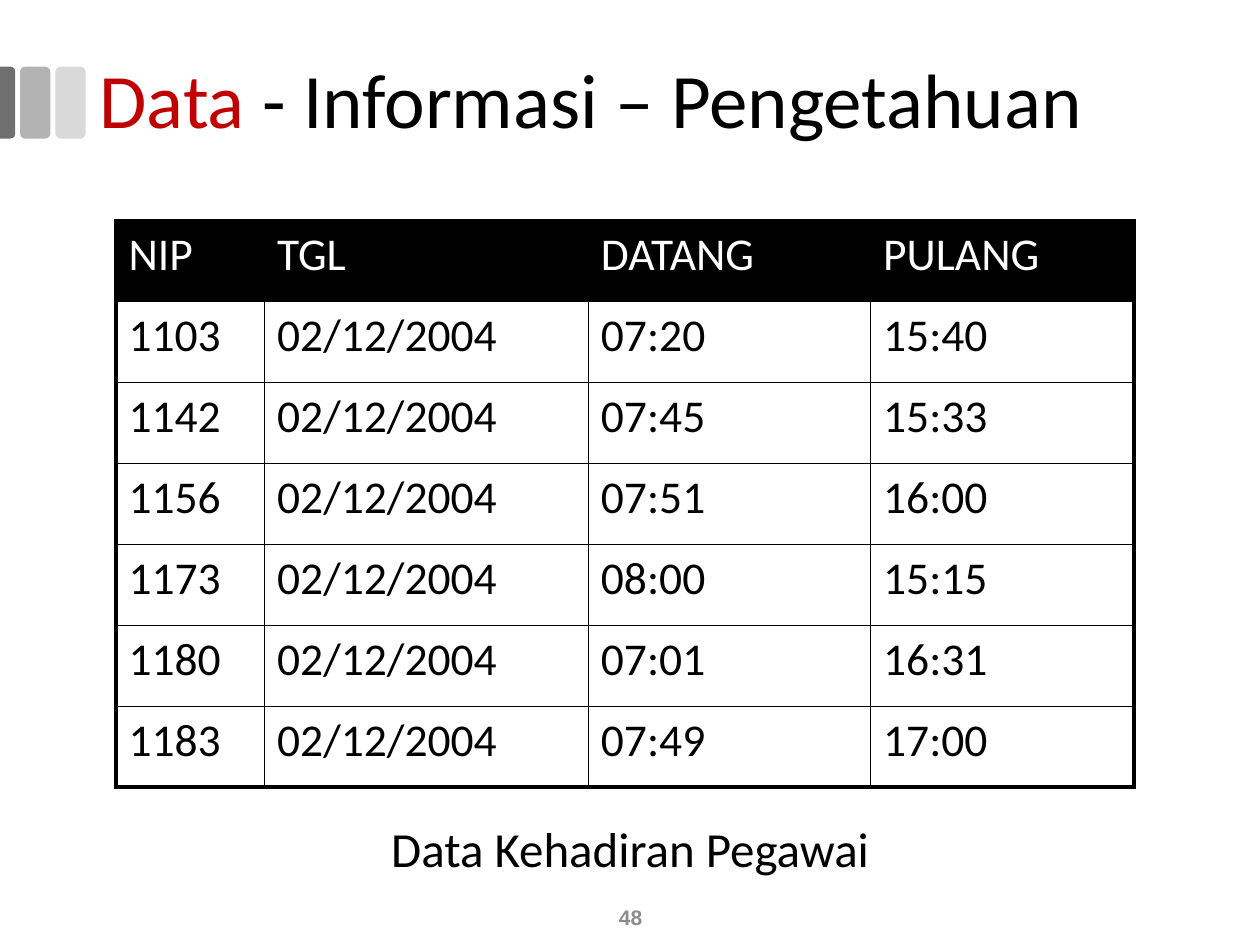
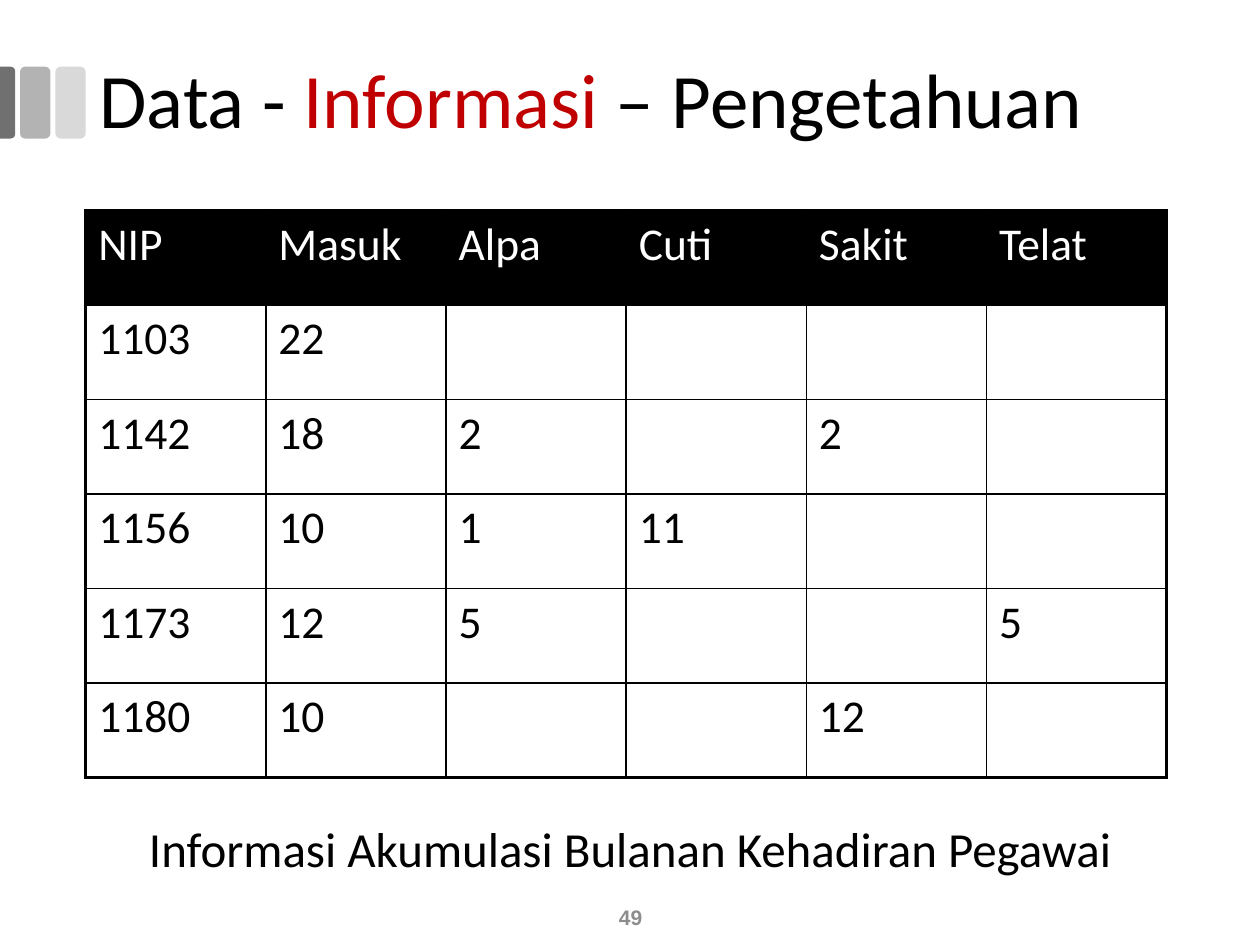
import collections

import lxml.etree
import pptx
import pptx.dml.color
import pptx.enum.shapes
import pptx.enum.text
import pptx.oxml.ns
import pptx.util

SLIDE_WIDTH, SLIDE_HEIGHT = 10, 7.5
BLACK, WHITE, RED, GREY = "000000", "FFFFFF", "C00000", "8C8C8C"
BODY_FONT, NUMBER_FONT = "Calibri", "Arial"
OUTER_BORDER, INNER_BORDER = 2.25, 1

SHAPE = pptx.enum.shapes.MSO_SHAPE
ALIGN = pptx.enum.text.PP_ALIGN
ANCHOR = pptx.enum.text.MSO_ANCHOR

Box = collections.namedtuple("Box", "left top width height")

TITLE_BOX = Box(0.69, 0.17, 8.62, 1.31)
CAPTION_BOX = Box(0.69, 6.5, 8.62, 0.62)
NUMBER_BOX = Box(3.88, 7.08, 2.25, 0.4)
MARKS_BOX = Box(0, 0.53, 0.68, 0.57)

ATTENDANCE = [
    ["NIP", "TGL", "DATANG", "PULANG"],
    ["1103", "02/12/2004", "07:20", "15:40"],
    ["1142", "02/12/2004", "07:45", "15:33"],
    ["1156", "02/12/2004", "07:51", "16:00"],
    ["1173", "02/12/2004", "08:00", "15:15"],
    ["1180", "02/12/2004", "07:01", "16:31"],
    ["1183", "02/12/2004", "07:49", "17:00"],
]
MONTHLY_TOTALS = [
    ["NIP", "Masuk", "Alpa", "Cuti", "Sakit", "Telat"],
    ["1103", "22", "", "", "", ""],
    ["1142", "18", "2", "", "2", ""],
    ["1156", "10", "1", "11", "", ""],
    ["1173", "12", "5", "", "", "5"],
    ["1180", "10", "", "", "12", ""],
]


def color(hex_code):
    return pptx.dml.color.RGBColor.from_string(hex_code)


def inches(box):
    return [pptx.util.Inches(length) for length in box]


def write(frame, text, size=28, font=BODY_FONT, fill=BLACK, bold=False,
          align=ALIGN.LEFT, anchor=ANCHOR.TOP, line_spacing=None, accent=None):
    """Fill a text frame with one paragraph; the accent word turns red."""
    frame.word_wrap = True
    frame.vertical_anchor = anchor
    para = frame.paragraphs[0]
    para.alignment = align
    para.line_spacing = line_spacing
    before, word, after = text.partition(accent) if accent else (text, "", "")
    for part, part_fill in ((before, fill), (word, RED), (after, fill)):
        if part:
            span = para.add_run()
            span.text = part
            span.font.size = pptx.util.Pt(size)
            span.font.name = font
            span.font.bold = bold
            span.font.color.rgb = color(part_fill)


def add_mark(page, kind, box, fill, adjustment, rotation=0):
    mark = page.shapes.add_shape(kind, *inches(box))
    mark.shadow.inherit = False
    mark.fill.solid()
    mark.fill.fore_color.rgb = color(fill)
    mark.line.fill.background()
    mark.adjustments[0] = adjustment
    mark.rotation = rotation


def add_marks(page, box):
    """Three bars at the slide's edge; the first shows only its right end."""
    bar_width, pitch, stub_width = 0.24, 0.28, 0.12
    right = box.left + box.width
    for index, fill in enumerate(("D9D9D9", "B3B3B3")):
        bar = Box(right - bar_width - index * pitch, box.top, bar_width, box.height)
        add_mark(page, SHAPE.ROUNDED_RECTANGLE, bar, fill, 0.167)
    stub = Box(box.left + (stub_width - box.height) / 2,
               box.top + (box.height - stub_width) / 2, box.height, stub_width)
    add_mark(page, SHAPE.ROUND_2_SAME_RECTANGLE, stub, "707070", 0.292, rotation=90)


def add_title(page, box, text, accent):
    title = page.shapes.title
    title.left, title.top, title.width, title.height = inches(box)
    write(title.text_frame, text, size=44, accent=accent,
          anchor=ANCHOR.MIDDLE, line_spacing=0.9)


def add_text(page, box, text, **style):
    write(page.shapes.add_textbox(*inches(box)).text_frame, text, **style)


def set_borders(cell, widths):
    """Draw black borders, with widths in points for left, right, top, bottom."""
    properties = cell._tc.get_or_add_tcPr()
    for side, width in zip("LRTB", widths):
        line = lxml.etree.SubElement(properties, pptx.oxml.ns.qn(f"a:ln{side}"),
                                     w=str(pptx.util.Pt(width)))
        solid = lxml.etree.SubElement(line, pptx.oxml.ns.qn("a:solidFill"))
        lxml.etree.SubElement(solid, pptx.oxml.ns.qn("a:srgbClr"), val=BLACK)


def add_grid(page, box, rows, column_shares):
    row_count, column_count = len(rows), len(column_shares)
    table = page.shapes.add_table(row_count, column_count, *inches(box)).table
    table.horz_banding = False
    for column, share in zip(table.columns, column_shares):
        column.width = pptx.util.Inches(box.width * share / sum(column_shares))
    for row_index, values in enumerate(rows):
        table.rows[row_index].height = pptx.util.Inches(box.height / row_count)
        is_header = row_index == 0
        for column_index, value in enumerate(values):
            cell = table.cell(row_index, column_index)
            on_edge = (column_index == 0, column_index == column_count - 1,
                       is_header, row_index == row_count - 1)
            set_borders(cell, [OUTER_BORDER if edge else INNER_BORDER
                               for edge in on_edge])
            if is_header:
                cell.fill.solid()
                cell.fill.fore_color.rgb = color(BLACK)
            else:
                cell.fill.background()
            write(cell.text_frame, value, size=26,
                  fill=WHITE if is_header else BLACK)


def add_table_page(deck, number, accent, caption, table_box, rows, column_shares):
    page = deck.slides.add_slide(deck.slide_layouts[5])
    add_marks(page, MARKS_BOX)
    add_title(page, TITLE_BOX, "Data - Informasi – Pengetahuan", accent)
    add_text(page, CAPTION_BOX, caption, align=ALIGN.CENTER, line_spacing=0.9)
    add_grid(page, table_box, rows, column_shares)
    add_text(page, NUMBER_BOX, str(number), size=12, font=NUMBER_FONT, fill=GREY,
             bold=True, align=ALIGN.CENTER, anchor=ANCHOR.MIDDLE)


def main():
    deck = pptx.Presentation()
    deck.slide_width = pptx.util.Inches(SLIDE_WIDTH)
    deck.slide_height = pptx.util.Inches(SLIDE_HEIGHT)
    add_table_page(deck, 48, "Data", "Data Kehadiran Pegawai",
                   Box(0.92, 1.75, 8.08, 4.5), ATTENDANCE, [1.18, 2.57, 2.24, 2.09])
    add_table_page(deck, 49, "Informasi", "Informasi Akumulasi Bulanan Kehadiran Pegawai",
                   Box(0.68, 1.67, 8.58, 4.5), MONTHLY_TOTALS, [1] * 6)
    deck.save("out.pptx")


if __name__ == "__main__":
    main()
